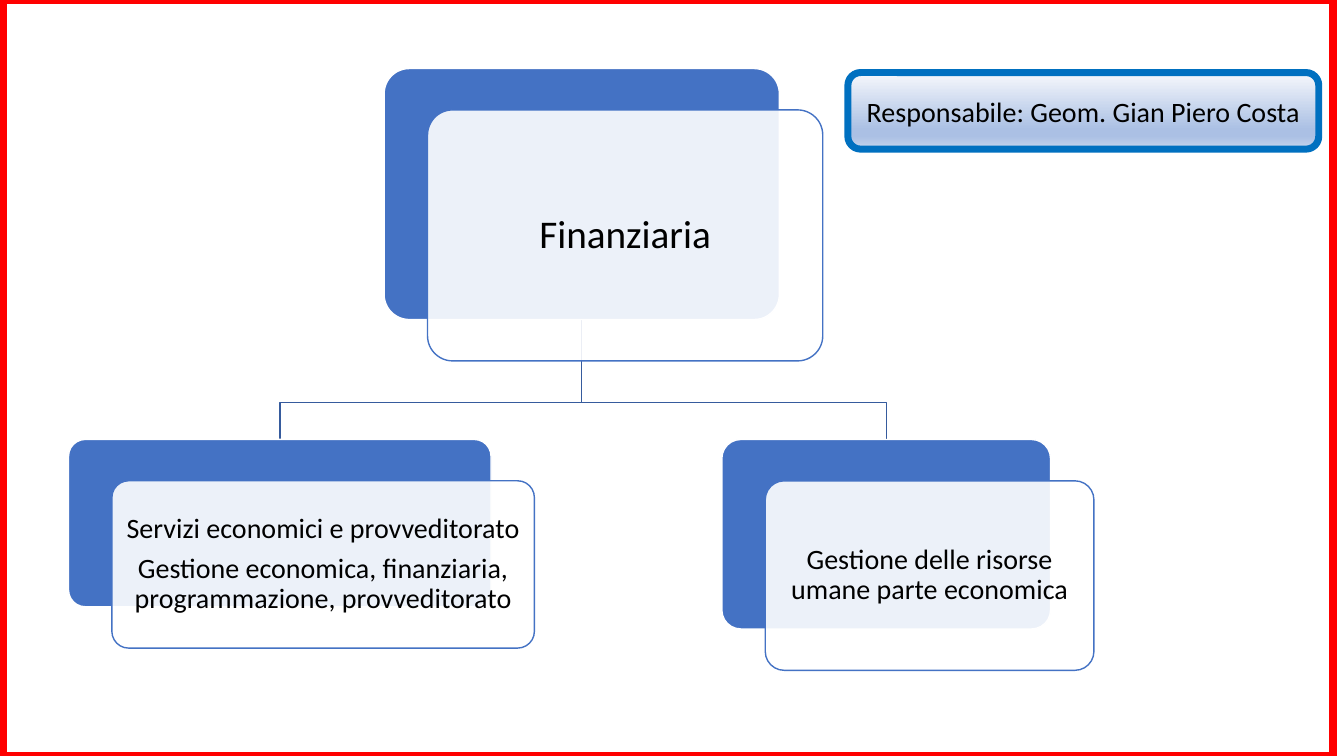
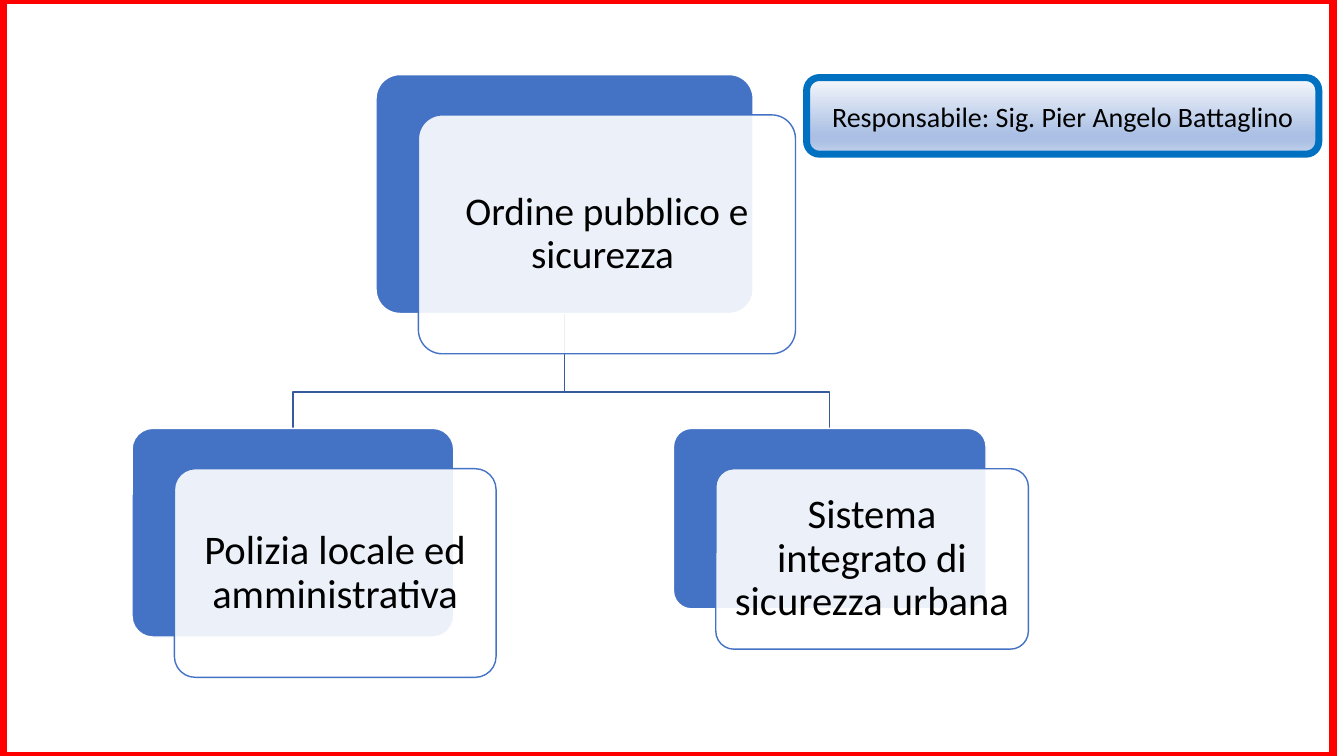
from lxml import etree
from pptx import Presentation
from pptx.dml.color import RGBColor
from pptx.enum.shapes import MSO_SHAPE
from pptx.enum.text import MSO_ANCHOR, PP_ALIGN
from pptx.oxml.ns import qn
from pptx.util import Inches, Pt

RECT, ROUNDED = MSO_SHAPE.RECTANGLE, MSO_SHAPE.ROUNDED_RECTANGLE
MIDDLE, CENTER = MSO_ANCHOR.MIDDLE, PP_ALIGN.CENTER

COLORS = {
    "box": "4472C4",
    "white": "FFFFFF",
    "branch": "365B9D",
    "frame": "FF0000",
    "badge_line": "0070C0",
    "text": "000000",
}
BADGE_STOPS = [(0, "F6F8FC"), (74, "ABC0E4"), (83, "ABC0E4"), (100, "C7D5ED")]
FONT = "Calibri"

# Per slide: manager, badge top and width, offset of the front cards, and the
# boxes (left, top, width, height, font size, paragraphs), the root box first
CHARTS = [
    {
        "manager": "Responsabile: Geom. Gian Piero Costa",
        "badge": (0.72, 4.67),
        "offset": (0.43, 0.41),
        "boxes": [
            (3.81, 0.68, 3.92, 2.49, 28, ["Finanziaria"]),
            (0.68, 4.36, 4.19, 1.66, 20, [
                "Servizi economici e provveditorato",
                "Gestione economica, finanziaria, programmazione, provveditorato",
            ]),
            (7.16, 4.36, 3.26, 1.88, 20,
             ["Gestione delle risorse umane parte economica"]),
        ],
    },
    {
        "manager": "Responsabile: Sig. Pier Angelo Battaglino",
        "badge": (0.77, 5.08),
        "offset": (0.42, 0.4),
        "boxes": [
            (3.73, 0.74, 3.74, 2.37, 28, ["Ordine pubblico e sicurezza "]),
            (1.31, 4.25, 3.19, 2.07, 29, ["Polizia locale ed amministrativa"]),
            (6.68, 4.25, 3.1, 1.79, 29, ["Sistema integrato di sicurezza urbana"]),
        ],
    },
]


def rgb(name):
    return RGBColor.from_string(COLORS[name])


class OrgChart:
    """Holds the presentation, the current slide and the shared style."""

    def __init__(self):
        self.prs = Presentation()
        self.prs.slide_width, self.prs.slide_height = Inches(13.33), Inches(7.5)
        self.slide = None

    def new_slide(self):
        self.slide = self.prs.slides.add_slide(self.prs.slide_layouts[6])

    def outline(self, shape, color, width):
        shape.shadow.inherit = False
        shape.line.color.rgb = rgb(color)
        shape.line.width = Pt(width)

    def shape(self, kind, place, fill, line, width):
        shape = self.slide.shapes.add_shape(kind, *map(Inches, place))
        if fill:
            shape.fill.solid()
            shape.fill.fore_color.rgb = rgb(fill)
        else:
            shape.fill.background()
        self.outline(shape, line, width)
        return shape

    def label(self, shape, paragraphs, size):
        frame = shape.text_frame
        frame.word_wrap = True
        frame.vertical_anchor = MIDDLE
        frame.text = "\n".join(paragraphs)
        for paragraph in frame.paragraphs:
            paragraph.alignment = CENTER
            for run in paragraph.runs:
                run.font.name, run.font.size = FONT, Pt(size)
                run.font.color.rgb = rgb("text")

    def branch(self, root, child, drop):
        """Line from the root's bottom centre to the child's top centre."""
        start_x, start_y = root[0] + root[2] / 2, root[1] + root[3]
        end_x, end_y = child[0] + child[2] / 2, child[1]
        bend_y = end_y - drop
        builder = self.slide.shapes.build_freeform(Inches(start_x), Inches(start_y))
        corners = [(start_x, bend_y), (end_x, bend_y), (end_x, end_y)]
        builder.add_line_segments(
            [(Inches(x), Inches(y)) for x, y in corners], close=False)
        line = builder.convert_to_shape()
        line.fill.background()
        self.outline(line, "branch", 1)

    def box(self, place, size, paragraphs, offset):
        """Blue box with a translucent, shifted card that carries the text."""
        left, top, width, height = place
        back = self.shape(ROUNDED, place, "box", "white", 1)
        front_place = (left + offset[0], top + offset[1], width, height)
        card = self.shape(ROUNDED, front_place, "white", "box", 1)
        for layer in (back, card):
            layer.adjustments[0] = 0.1
        color = card._element.spPr.find(qn("a:solidFill"))[0]
        etree.SubElement(color, qn("a:alpha"), val="90000")

        self.label(card, paragraphs, size)
        frame = card.text_frame
        frame.margin_left = frame.margin_right = Pt(size * 0.28)
        frame.margin_top = frame.margin_bottom = Pt(size * 0.28)
        for paragraph in frame.paragraphs:
            paragraph.line_spacing = 0.9
            paragraph.space_after = Pt(size * 0.35)

    def frame(self):
        self.shape(RECT, (0.03, 0, 13.19, 7.5), None, "frame", 6)

    def badge(self, text, top, width):
        """Manager's label, aligned to the right, with a vertical gradient."""
        place = (13.08 - width, top, width, 0.76)
        badge = self.shape(ROUNDED, place, None, "badge_line", 5)
        badge.fill.gradient()
        badge.fill.gradient_angle = 270
        stops = badge._element.spPr.find(qn("a:gradFill")).find(qn("a:gsLst"))
        for stop in list(stops):
            stops.remove(stop)
        for position, color in BADGE_STOPS:
            stop = etree.SubElement(stops, qn("a:gs"), pos=str(position * 1000))
            etree.SubElement(stop, qn("a:srgbClr"), val=color)
        self.label(badge, [text], 20)


def main():
    deck = OrgChart()
    for chart in CHARTS:
        deck.new_slide()
        offset, boxes = chart["offset"], chart["boxes"]
        # Branches lie behind the boxes
        for child in boxes[1:]:
            deck.branch(boxes[0], child, offset[1] * 0.9)
        for *place, size, paragraphs in boxes:
            deck.box(place, size, paragraphs, offset)
        # Frame and manager
        deck.frame()
        deck.badge(chart["manager"], *chart["badge"])
    deck.prs.save("out.pptx")


if __name__ == "__main__":
    main()
